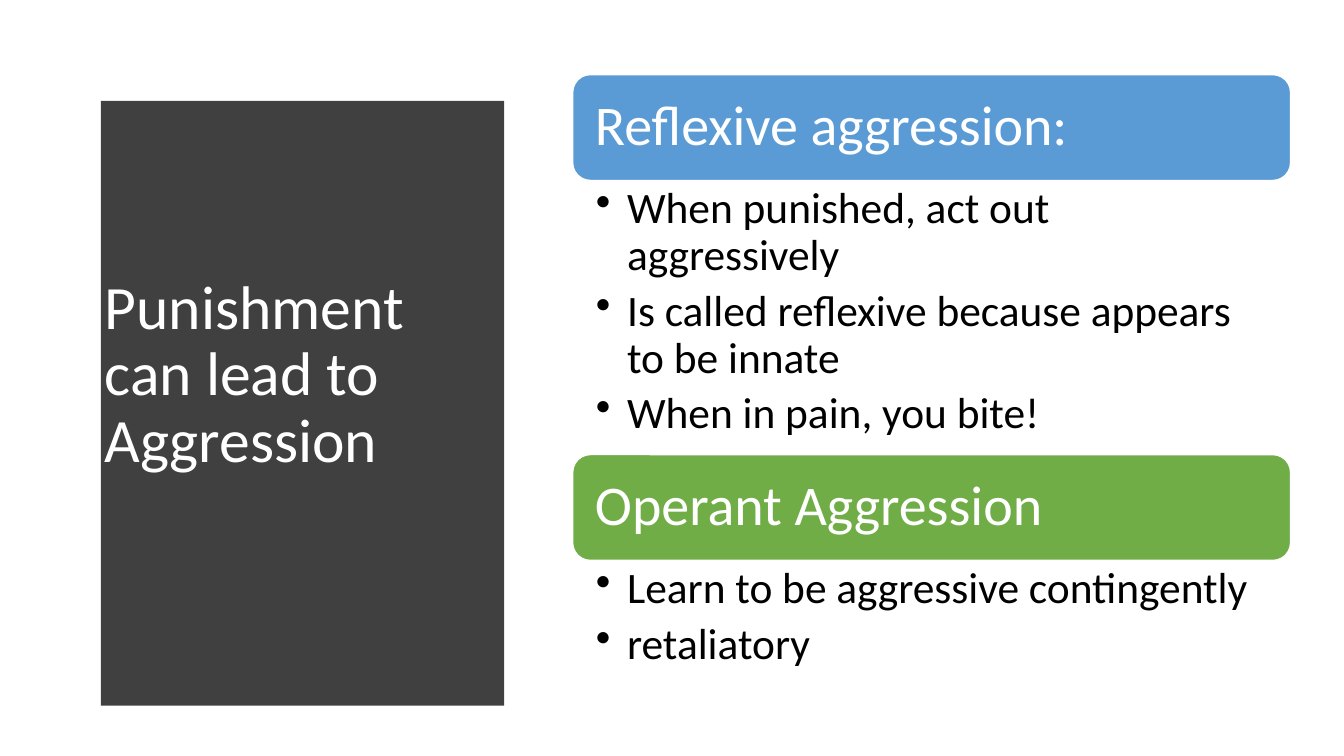
"""Build the slide on how punishment can lead to aggression."""
import pptx
import pptx.util
import pptx.dml.color
import pptx.enum.shapes
import pptx.enum.text
import pptx.oxml.ns
import lxml.etree

TITLE = "Punishment can lead to Aggression"
CARDS = [
    ("Reflexive aggression:", "5B9BD5", 2.72, [
        "When punished, act out aggressively",
        "Is called reflexive because appears to be innate",
        "When in pain, you bite!",
    ]),
    ("Operant Aggression", "70AD47", 1.18, [
        "Learn to be aggressive contingently",
        "retaliatory",
    ]),
]
THEME = {
    "font": "Calibri", "panel": "404040", "light": "FFFFFF", "dark": "000000",
    "title": 44, "head": 40, "body": 31,
}
WIDE, HIGH = 13.33, 7.5
LEFT, TOP, EDGE, BASE = 0.53, 0.52, 5.08, 6.96
BULGE, STEPS = 0.24, 40
COL, SPAN, START, BAR = 5.68, 7.12, 0.74, 1.05
HANG = 0.31

Inch = pptx.util.Inches
Pt = pptx.util.Pt
MIDDLE = pptx.enum.text.MSO_ANCHOR.MIDDLE
START_SIDE = pptx.enum.text.PP_ALIGN.LEFT


def tint(code):
    return pptx.dml.color.RGBColor.from_string(code)


def apply(thing, values):
    for name, value in values.items():
        setattr(thing, name, value)


def paint(shape, code):
    shape.shadow.inherit = False
    shape.fill.solid()
    shape.fill.fore_color.rgb = tint(code)


def write(shape, lines, size, color, pads, anchor=None, gap=0):
    frame = shape.text_frame
    sides = ("margin_left", "margin_top", "margin_right", "margin_bottom")
    apply(frame, dict(zip(sides, map(Inch, pads))))
    apply(frame, {"word_wrap": True, "vertical_anchor": anchor})
    for i, line in enumerate(lines):
        para = frame.paragraphs[0] if i == 0 else frame.add_paragraph()
        apply(para, {"line_spacing": 0.9, "space_after": Pt(gap),
                     "alignment": START_SIDE})
        run = para.add_run()
        run.text = line
        apply(run.font, {"size": Pt(THEME[size]), "name": THEME["font"]})
        run.font.color.rgb = tint(THEME[color])
    return frame


def bullet(para):
    props = para._p.get_or_add_pPr()
    props.set("marL", str(Inch(HANG)))
    props.set("indent", str(-Inch(HANG)))
    mark = lxml.etree.SubElement(props, pptx.oxml.ns.qn("a:buChar"))
    mark.set("char", "•")


def panel(shapes):
    curve = []
    for i in range(STEPS + 1):
        share = i / STEPS
        x = EDGE + BULGE * (1 - (2 * share - 1) ** 2)
        curve.append((x, TOP + share * (BASE - TOP)))
    pen = shapes.build_freeform(LEFT, TOP, scale=Inch(1))
    pen.add_line_segments(curve + [(LEFT, BASE)], close=True)
    shape = pen.convert_to_shape()
    paint(shape, THEME["panel"])
    shape.line.fill.background()


def card(shapes, top, head, color, tall, points):
    kind = pptx.enum.shapes.MSO_SHAPE.ROUNDED_RECTANGLE
    bar = shapes.add_shape(kind, *map(Inch, (COL, top, SPAN, BAR)))
    paint(bar, color)
    bar.line.color.rgb = tint(THEME["light"])
    bar.line.width = Pt(1)
    write(bar, [head], "head", "light", [0.17] * 4, MIDDLE)
    box = shapes.add_textbox(*map(Inch, (COL, top + BAR, SPAN, tall)))
    frame = write(box, points, "body", "dark", (0.23, 0.06, 0.31, 0.06), gap=6.2)
    for para in frame.paragraphs:
        bullet(para)


def main():
    deck = pptx.Presentation()
    apply(deck, {"slide_width": Inch(WIDE), "slide_height": Inch(HIGH)})
    shapes = deck.slides.add_slide(deck.slide_layouts[6]).shapes
    panel(shapes)
    title = shapes.add_textbox(*map(Inch, (0.94, 1.11, 3.74, 5.24)))
    write(title, [TITLE], "title", "light", (0.1, 0.05, 0.1, 0.05), MIDDLE)
    top = START
    for head, color, tall, points in CARDS:
        card(shapes, top, head, color, tall, points)
        top += BAR + tall
    deck.save("out.pptx")


if __name__ == "__main__":
    main()
